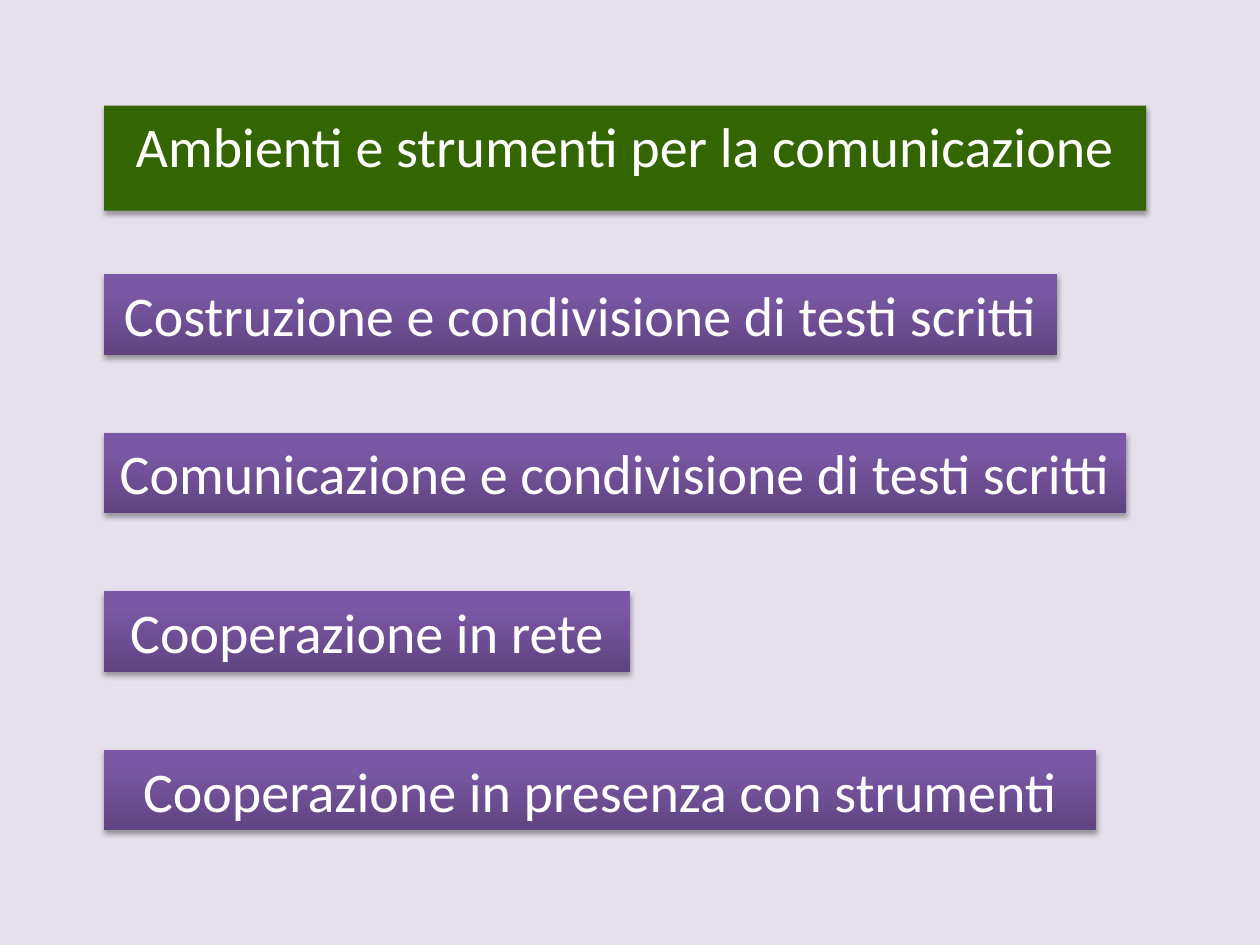
"""Build a slide with a green title bar and four purple topic bars."""
from copy import deepcopy

from pptx import Presentation
from pptx.dml.color import RGBColor
from pptx.enum.shapes import MSO_SHAPE
from pptx.enum.text import MSO_ANCHOR, MSO_AUTO_SIZE, PP_ALIGN
from pptx.oxml import parse_xml
from pptx.oxml.ns import qn
from pptx.util import Pt

RECT = MSO_SHAPE.RECTANGLE
TOP = MSO_ANCHOR.TOP
GROW = MSO_AUTO_SIZE.SHAPE_TO_FIT_TEXT
CENTER = PP_ALIGN.CENTER
LEFT, HIGH = 59.5, 46
SHADE = (
    '<a:outerShdw xmlns:a="http://schemas.openxmlformats.org/drawingml/2006/main"'
    ' blurRad="%d" dist="%d" dir="5400000" rotWithShape="0">'
    '<a:srgbClr val="000000"><a:alpha val="35000"/></a:srgbClr></a:outerShdw>'
    % (Pt(3.1), Pt(1.8))
)


def color(code):
    """Turn a hex string into a colour."""
    return RGBColor.from_string(code)


def dress(bar, text, top, width):
    """Place a bar, write its text and give it a shadow."""
    place = {"left": LEFT, "top": top, "width": width, "height": HIGH}
    for name, value in place.items():
        setattr(bar, name, Pt(value))
    bar.line.fill.background()
    bar.shadow.inherit = False
    effect = bar.fill._xPr.find(qn("a:effectLst"))
    effect.append(parse_xml(SHADE))
    frame = bar.text_frame
    frame.text = text
    look = {"word_wrap": True, "auto_size": GROW, "vertical_anchor": TOP}
    for name, value in look.items():
        setattr(frame, name, value)
    para = frame.paragraphs[0]
    para.alignment = CENTER
    font = para.runs[0].font
    for name, value in {"name": "Calibri", "size": Pt(32)}.items():
        setattr(font, name, value)
    font.color.rgb = color("FFFFFF")


deck = Presentation()
deck.slide_width, deck.slide_height = Pt(720), Pt(540)
slide = deck.slides.add_slide(deck.slide_layouts[5])
slide.background.fill.solid()
slide.background.fill.fore_color.rgb = color("E6E0EC")

title = slide.shapes.title
title.fill.solid()
title.fill.fore_color.rgb = color("336600")
dress(title, "Ambienti e strumenti per la comunicazione", 60.3, 595.5)

topics = [
    ("Costruzione e condivisione di testi scritti", 544.5),
    ("Comunicazione e condivisione di testi scritti", 584),
    ("Cooperazione in rete", 300.5),
    ("Cooperazione in presenza con strumenti", 567),
]
stops = [(0, "5F4480"), (0.8, "7B58A6"), (1, "7C57A8")]
for row, (text, width) in enumerate(topics):
    bar = slide.shapes.add_shape(RECT, 0, 0, Pt(width), Pt(HIGH))
    bar.fill.gradient()
    bar.fill.gradient_angle = 90
    chain = bar.fill._xPr.find(qn("a:gradFill")).find(qn("a:gsLst"))
    chain.append(deepcopy(chain[0]))
    for stop, (spot, code) in zip(bar.fill.gradient_stops, stops):
        stop.position = spot
        stop.color.rgb = color(code)
    dress(bar, text, 156.7 + row * 90.6, width)

deck.save("out.pptx")
